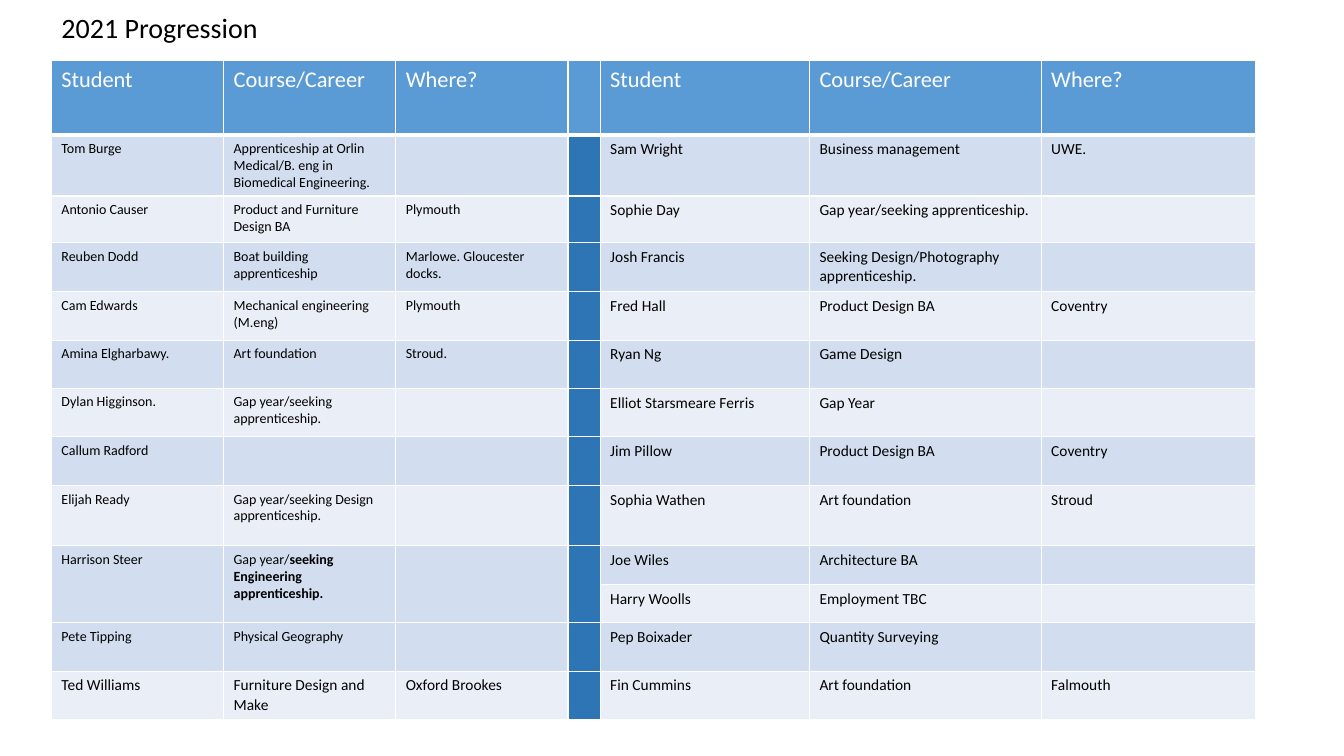
from lxml import etree
from pptx import Presentation
from pptx.dml.color import RGBColor
from pptx.enum.text import MSO_ANCHOR, PP_ALIGN
from pptx.oxml.ns import qn
from pptx.util import Pt

MIDDLE, LEFT = MSO_ANCHOR.MIDDLE, PP_ALIGN.LEFT

# Content: student, course, place on each side of the divider
TITLE = "2021 Progression"
HEADINGS = ("Student", "Course/Career", "Where?")
LEFT_SIDE = [
    HEADINGS,
    ("Tom Burge", "Apprenticeship at Orlin Medical/B. eng in Biomedical Engineering.", ""),
    ("Antonio Causer", "Product and Furniture Design BA", "Plymouth"),
    ("Reuben Dodd", "Boat building apprenticeship", "Marlowe. Gloucester docks."),
    ("Cam Edwards", "Mechanical engineering (M.eng)", "Plymouth"),
    ("Amina Elgharbawy.", "Art foundation", "Stroud."),
    ("Dylan Higginson.", "Gap year/seeking apprenticeship.", ""),
    ("Callum Radford", "", ""),
    ("Elijah Ready", "Gap year/seeking Design apprenticeship.", ""),
    ("Harrison Steer", ("Gap year/", "seeking Engineering apprenticeship."), ""),
    ("", "", ""),
    ("Pete Tipping", "Physical Geography", ""),
    ("Ted Williams", "Furniture Design and Make", "Oxford Brookes"),
]
RIGHT_SIDE = [
    HEADINGS,
    ("Sam Wright", "Business management", "UWE."),
    ("Sophie Day", "Gap year/seeking apprenticeship.", ""),
    ("Josh Francis", "Seeking Design/Photography apprenticeship.", ""),
    ("Fred Hall", "Product Design BA", "Coventry"),
    ("Ryan Ng", "Game Design", ""),
    ("Elliot Starsmeare Ferris", "Gap Year", ""),
    ("Jim Pillow", "Product Design BA", "Coventry"),
    ("Sophia Wathen", "Art foundation", "Stroud"),
    ("Joe Wiles", "Architecture BA", ""),
    ("Harry Woolls", "Employment TBC", ""),
    ("Pep Boixader", "Quantity Surveying", ""),
    ("Fin Cummins", "Art foundation", "Falmouth"),
]
COL_WIDTHS = (123, 123, 123, 23, 149.5, 165.5, 153)
ROW_HEIGHTS = (53, 43, 33.5, 35, 34.5, 34.5, 34.5, 35, 43, 27.5, 27.5, 34.5, 34.5)
DIVIDER, MERGED_ROW, LAST_ROW = 3, 9, len(LEFT_SIDE) - 1
HEADER_FILL, DIVIDER_FILL = "5B9BD5", "2E75B6"
BANDS = ("EAEFF7", "D2DEEF")
WHITE, BLACK = "FFFFFF", "000000"


def rgb(value):
    return RGBColor.from_string(value)


def add_run(p, text, size, color, bold=False):
    r = p.add_run()
    r.text = text
    for name, value in {"name": "Calibri", "size": Pt(size), "bold": bold}.items():
        setattr(r.font, name, value)
    r.font.color.rgb = rgb(color)


def add_border(cell, side, width):
    ln = etree.SubElement(cell._tc.get_or_add_tcPr(), qn("a:ln" + side), w=str(Pt(width)))
    fill = etree.SubElement(ln, qn("a:solidFill"))
    etree.SubElement(fill, qn("a:srgbClr"), val=WHITE)


prs = Presentation()
prs.slide_width, prs.slide_height = Pt(960), Pt(540)
s = prs.slides.add_slide(prs.slide_layouts[5])

# Title
title = s.shapes.title
box = {"left": 36.7, "top": 5, "width": 828, "height": 32.4}
for name, value in box.items():
    setattr(title, name, Pt(value))
tf = title.text_frame
tf.vertical_anchor = MIDDLE
p = tf.paragraphs[0]
p.alignment, p.line_spacing = LEFT, 0.9
add_run(p, TITLE, 20, BLACK)

# Table grid
frame = s.shapes.add_table(len(ROW_HEIGHTS), len(COL_WIDTHS), Pt(36.7), Pt(43.4),
                           Pt(sum(COL_WIDTHS)), Pt(sum(ROW_HEIGHTS)))
table = frame.table
for col, width in zip(table.columns, COL_WIDTHS):
    col.width = Pt(width)
for row, height in zip(table.rows, ROW_HEIGHTS):
    row.height = Pt(height)

# Cells
for i, (left, right) in enumerate(zip(LEFT_SIDE, RIGHT_SIDE)):
    for j, text in enumerate((*left, "", *right)):
        cell = table.cell(i, j)
        if i == 0:
            size, color, fill = 16, WHITE, HEADER_FILL
            for side, width in (("L", 1), ("R", 1), ("T", 1), ("B", 3)):
                add_border(cell, side, width)
        else:
            size = 10 if j < DIVIDER and i < LAST_ROW else 11
            color = BLACK
            fill = DIVIDER_FILL if j == DIVIDER else BANDS[i % 2]
        cell.fill.solid()
        cell.fill.fore_color.rgb = rgb(fill)
        p = cell.text_frame.paragraphs[0]
        if not text:
            # Keeps empty cells from stretching their row
            etree.SubElement(p._p, qn("a:endParaRPr"), sz=str(size * 100))
            continue
        parts = (text,) if isinstance(text, str) else text
        for k, part in enumerate(parts):
            add_run(p, part, size, color, bold=k > 0)

# The left side and divider span two rows beside the extra student
for j in range(DIVIDER + 1):
    table.cell(MERGED_ROW, j).merge(table.cell(MERGED_ROW + 1, j))

prs.save("out.pptx")
